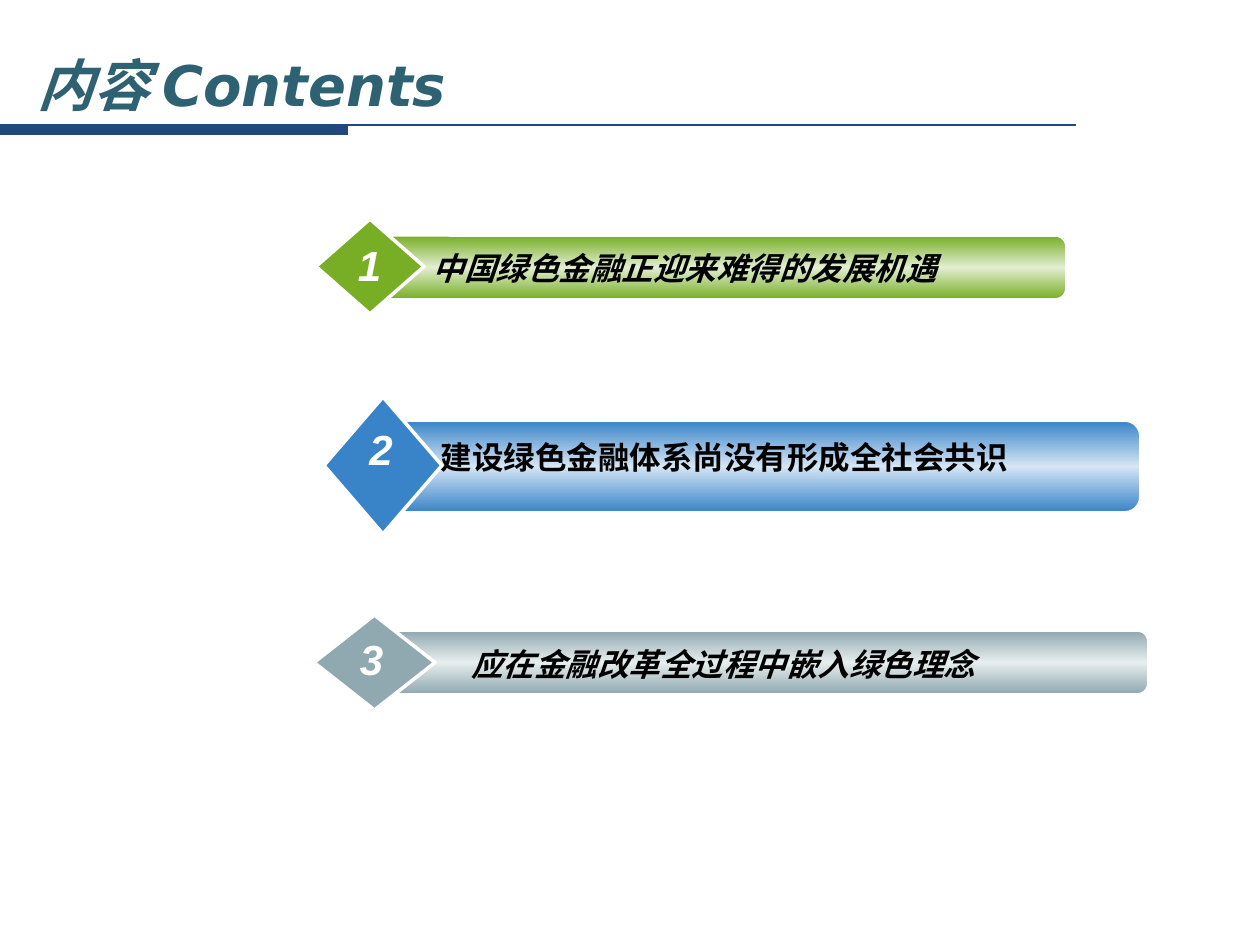
"""Build a contents slide with three numbered diamond banners."""
from dataclasses import dataclass
from copy import deepcopy

from lxml.etree import SubElement
from pptx import Presentation
from pptx.dml.color import RGBColor
from pptx.enum.shapes import MSO_CONNECTOR, MSO_SHAPE
from pptx.enum.text import MSO_ANCHOR, MSO_AUTO_SIZE, PP_ALIGN
from pptx.oxml.ns import qn
from pptx.util import Emu, Pt


@dataclass(frozen=True)
class Theme:
    """Colours, fonts and type sizes of the slide."""
    navy: str = "1F497D"
    teal: str = "2E6272"
    white: str = "FFFFFF"
    black: str = "000000"
    title_font: str = "DejaVu Sans"
    body_font: str = "Arial"
    title_size: int = 32
    number_size: int = 24
    label_size: int = 18


THEME = Theme()
PX_PER_INCH = 126
BANNERS = [
    {"label": "中国绿色金融正迎来难得的发展机遇", "italic": True,
     "dark": "77AE26", "light": "E3EED1",
     "bar": (377, 236, 689, 63), "diamond": (316, 219, 108, 95),
     "label_box": (413, 243, 544, 50), "number_box": (341, 233, 57, 63)},
    {"label": "建设绿色金融体系尚没有形成全社会共识", "italic": False,
     "dark": "3984C9", "light": "D5E5F4",
     "bar": (389, 421, 751, 91), "diamond": (324, 397, 118, 137),
     "label_box": (428, 432, 593, 73), "number_box": (350, 417, 62, 91)},
    {"label": "应在金融改革全过程中嵌入绿色理念", "italic": True,
     "dark": "90A8B0", "light": "E7EEEE",
     "bar": (381, 631, 767, 63), "diamond": (314, 615, 121, 95),
     "label_box": (421, 639, 605, 50), "number_box": (340, 627, 63, 63)},
]


def px(length):
    """Turn pixels into EMU."""
    return Emu(round(length * 914400 / PX_PER_INCH))


def rgb(value):
    """Turn a hex string into a colour."""
    return RGBColor.from_string(value)


def apply_format(target, values):
    """Set every attribute named in a dict of format values."""
    for name, value in values.items():
        setattr(target, name, value)


def add_block(shapes, kind, box, fill=None, outline=None, width=0):
    """Add a preset shape with an optional solid fill and outline."""
    shape = shapes.add_shape(kind, *map(px, box))
    shape.shadow.inherit = False
    if fill:
        shape.fill.solid()
        shape.fill.fore_color.rgb = rgb(fill)
    if outline:
        shape.line.color.rgb = rgb(outline)
        shape.line.width = Pt(width)
    else:
        shape.line.fill.background()
    return shape


def fill_gradient(shape, dark, light):
    """Fill a shape from dark through light to dark, top to bottom."""
    shape.fill.gradient()
    shape.fill.gradient_angle = 270
    first = shape._element.spPr.find(".//" + qn("a:gs"))
    first.addnext(deepcopy(first))
    stops = zip(shape.fill.gradient_stops, (0, 0.5, 1), (dark, light, dark))
    for stop, position, color in stops:
        stop.position = position
        stop.color.rgb = rgb(color)


def add_text(shapes, box, text, font, color, frame=None, alignment=PP_ALIGN.CENTER):
    """Add a text box holding one paragraph."""
    text_frame = shapes.add_textbox(*map(px, box)).text_frame
    apply_format(text_frame, {"word_wrap": True, **(frame or {})})
    paragraph = text_frame.paragraphs[0]
    paragraph.text = text
    paragraph.alignment = alignment
    apply_format(paragraph.font, {"bold": True, **font})
    paragraph.font.color.rgb = rgb(color)


def add_rule(shapes):
    """Add the thin line and thick bar below the title."""
    line = shapes.add_connector(MSO_CONNECTOR.STRAIGHT, px(0), px(125), px(1076), px(125))
    line.line.color.rgb = rgb(THEME.navy)
    line.line.width = Pt(1.5)
    SubElement(line._element.spPr, qn("a:effectLst"))
    add_block(shapes, MSO_SHAPE.RECTANGLE, (0, 125, 348, 10), THEME.navy)


def add_banner(shapes, number, banner):
    """Add a gradient bar with its numbered diamond and label."""
    bar = add_block(shapes, MSO_SHAPE.ROUNDED_RECTANGLE, banner["bar"],
                    outline=THEME.white, width=1)
    fill_gradient(bar, banner["dark"], banner["light"])
    add_block(shapes, MSO_SHAPE.DIAMOND, banner["diamond"], banner["dark"], THEME.white, 2)
    grow = {"auto_size": MSO_AUTO_SIZE.SHAPE_TO_FIT_TEXT}
    add_text(shapes, banner["label_box"], banner["label"],
             {"name": THEME.body_font, "size": Pt(THEME.label_size), "italic": banner["italic"]},
             THEME.black, grow)
    add_text(shapes, banner["number_box"], str(number),
             {"name": THEME.body_font, "size": Pt(THEME.number_size), "italic": True},
             THEME.white, {**grow, "word_wrap": False})


def main():
    """Build and save the slide."""
    presentation = Presentation()
    apply_format(presentation, {"slide_width": px(1260), "slide_height": px(945)})
    slide = presentation.slides.add_slide(presentation.slide_layouts[6])
    add_rule(slide.shapes.add_group_shape().shapes)
    for number, banner in enumerate(BANNERS, start=1):
        add_banner(slide.shapes.add_group_shape().shapes, number, banner)
    add_text(slide.shapes, (25, 45, 1061, 78), "内容 Contents",
             {"name": THEME.title_font, "size": Pt(THEME.title_size), "italic": True},
             THEME.teal, {"vertical_anchor": MSO_ANCHOR.MIDDLE}, PP_ALIGN.LEFT)
    presentation.save("out.pptx")


if __name__ == "__main__":
    main()
